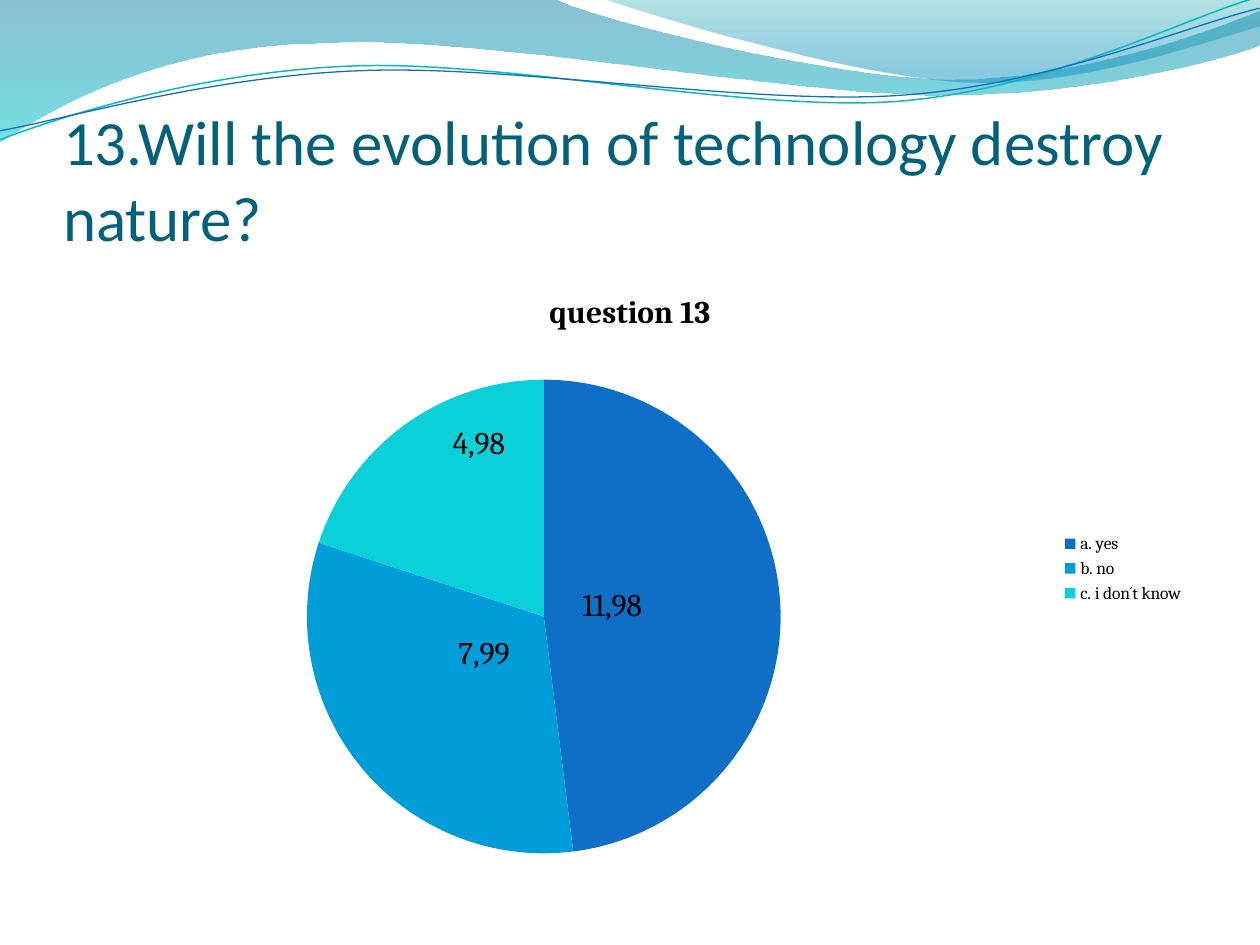
"""Build a survey slide with a wave header, a title and a pie chart."""
from lxml import etree
from pptx import Presentation, util as u
from pptx.chart.data import CategoryChartData
from pptx.dml.color import RGBColor
from pptx.enum import chart as charts, text as texts
from pptx.oxml import parse_xml
from pptx.oxml.ns import nsdecls, qn

SCALE = 914400 / 126
CHART_BOX = (63, 266, 1134, 605)
PIE_BOX = (307, 380, 474, 474)
ANSWERS = [
    ("a. yes", 11.98, "11,98", "0F6FC6", (-50, -3)),
    ("b. no", 7.99, "7,99", "009DD9", (32, -38)),
    ("c. i don´t know", 4.98, "4,98", "0BD0D9", (4, -76)),
]
BANDS = [
    ([(0, 0), (554, -1), (600, 21, 837, 79, 955, 79),
      (1074, 79, 1207, 33, 1260, 11), (1261, 45),
      (1239, 55, 1096, 96, 940, 95), (783, 95, 481, 35, 324, 43),
      (163, 45, 58, 105, -1, 142), (0, 0)],
     [("0074A1", 0, 45), ("00C6CF", 1, 55)]),
    ([(604, -1), (642, 14, 859, 78, 969, 82),
      (1079, 87, 1211, 40, 1260, 26), (1260, 0), (604, -1)],
     [("00A1A9", 0, 30), ("008BBF", 0.8, 45)]),
]
WAVES = [
    ([(-2, 110), (58, 90, 199, 52, 350, 53), (499, 53, 745, 118, 896, 114),
      (1049, 109, 1184, 45, 1260, 27)], "0AB8BF", 0.85),
    ([(-2, 101), (57, 94, 207, 57, 357, 58), (509, 58, 750, 112, 902, 108),
      (1052, 104, 1188, 52, 1262, 38)], "0F6FC6", 0.75),
]


def px(length):
    """Turn pixels into EMU."""
    return u.Emu(round(length * SCALE))


def color(value):
    """Turn a hex string into a colour."""
    return RGBColor.from_string(value)


def format_font(font, name="Cambria", size=18, fill="000000", bold=False):
    """Set the face, size, colour and weight of a font."""
    font.name, font.size, font.bold = name, u.Pt(size), bold
    font.color.rgb = color(fill)


def write_text(frame, content, **font_format):
    """Write one formatted run into a text frame."""
    span = frame.paragraphs[0].add_run()
    span.text = content
    format_font(span.font, **font_format)


def add_outline(page, segments, close):
    """Draw a freeform of straight and cubic segments."""
    points = [(px(x), px(y)) for segment in segments
              for x, y in zip(segment[::2], segment[1::2])]
    builder = page.shapes.build_freeform(*points[0])
    builder.add_line_segments(points[1:], close=close)
    shape = builder.convert_to_shape()
    shape.shadow.inherit = False
    steps = iter(shape._element.spPr.findall(".//" + qn("a:lnTo")))
    for segment in segments[1:]:
        step = next(steps)
        if len(segment) == 6:
            step.addprevious(curve := etree.Element(qn("a:cubicBezTo")))
            for part in (step, next(steps), next(steps)):
                curve.append(part[0])
                part.getparent().remove(part)
    return shape


def add_band(page, segments, stops):
    """Add a closed band with a translucent vertical gradient."""
    band = add_outline(page, segments, True)
    band.line.fill.background()
    band.fill.gradient()
    band.fill.gradient_angle = 270
    for stop, (value, position, _) in zip(band.fill.gradient_stops, stops):
        stop.color.rgb, stop.position = color(value), position
    hues = band._element.spPr.findall(".//" + qn("a:srgbClr"))
    for hue, (_, _, opacity) in zip(hues, stops):
        etree.SubElement(hue, qn("a:alpha")).set("val", str(opacity * 1000))


def add_wave(page, segments, value, width):
    """Add an open, slightly turned curved line."""
    wave = add_outline(page, segments, False)
    wave.rotation = 357.3
    wave.fill.background()
    wave.line.color.rgb, wave.line.width = color(value), u.Pt(width)


def add_title(page, content):
    """Place and fill the title placeholder."""
    title = page.shapes.title
    title.left, title.top, title.width, title.height = map(px, (63, 97, 1134, 157))
    frame = title.text_frame
    frame.word_wrap, frame.auto_size = True, texts.MSO_AUTO_SIZE.NONE
    frame.vertical_anchor = texts.MSO_ANCHOR.BOTTOM
    frame.margin_left = frame.margin_right = frame.margin_bottom = 0
    frame.paragraphs[0].alignment = texts.PP_ALIGN.LEFT
    write_text(frame, content, name="Calibri", size=36, fill="04617B")


def manual_layout(**settings):
    """Make a chart layout element from its settings."""
    items = "".join(f'<c:{key} val="{value}"/>' for key, value in settings.items())
    return parse_xml(f'<c:layout {nsdecls("c")}><c:manualLayout>{items}'
                     '</c:manualLayout></c:layout>')


def add_pie(page, name):
    """Add the pie chart with its title, legend and value labels."""
    left, top, width, height = CHART_BOX
    data = CategoryChartData()
    data.categories = [answer[0] for answer in ANSWERS]
    data.add_series(name, [answer[1] for answer in ANSWERS])
    chart = page.shapes.add_chart(charts.XL_CHART_TYPE.PIE, *map(px, CHART_BOX), data).chart
    format_font(chart.font, size=10)
    chart.has_title = True
    write_text(chart.chart_title.text_frame, name, bold=True)
    chart.has_legend = True
    chart.legend.position = charts.XL_LEGEND_POSITION.RIGHT
    chart.legend.include_in_layout = False
    x, y, w, h = PIE_BOX
    chart._chartSpace.chart.plotArea.insert(0, manual_layout(
        layoutTarget="inner", xMode="edge", yMode="edge",
        x=round((x - left) / width, 3), y=round((y - top) / height, 3),
        w=round(w / width, 3), h=round(h / height, 3)))
    plot = chart.plots[0]
    plot.vary_by_categories = True
    series = plot.series[0]
    series.data_labels.show_value = True
    format_font(series.data_labels.font)
    for index, (_, _, caption, value, _) in enumerate(ANSWERS):
        point = series.points[index]
        point.format.fill.solid()
        point.format.fill.fore_color.rgb = color(value)
        write_text(point.data_label.text_frame, caption)
        point.data_label.position = charts.XL_LABEL_POSITION.CENTER
    labels = chart._chartSpace.findall(".//" + qn("c:dLbl"))
    for label, (*_, (dx, dy)) in zip(labels, ANSWERS):
        label.insert(1, manual_layout(x=round(dx / width, 3), y=round(dy / height, 3)))


def main():
    """Build and save the deck."""
    deck = Presentation()
    deck.slide_width, deck.slide_height = px(1260), px(945)
    page = deck.slides.add_slide(deck.slide_layouts[5])
    for band in BANDS:
        add_band(page, *band)
    for wave in WAVES:
        add_wave(page, *wave)
    add_title(page, "13.Will the evolution of technology destroy nature?")
    add_pie(page, "question 13")
    deck.save("out.pptx")


if __name__ == "__main__":
    main()
